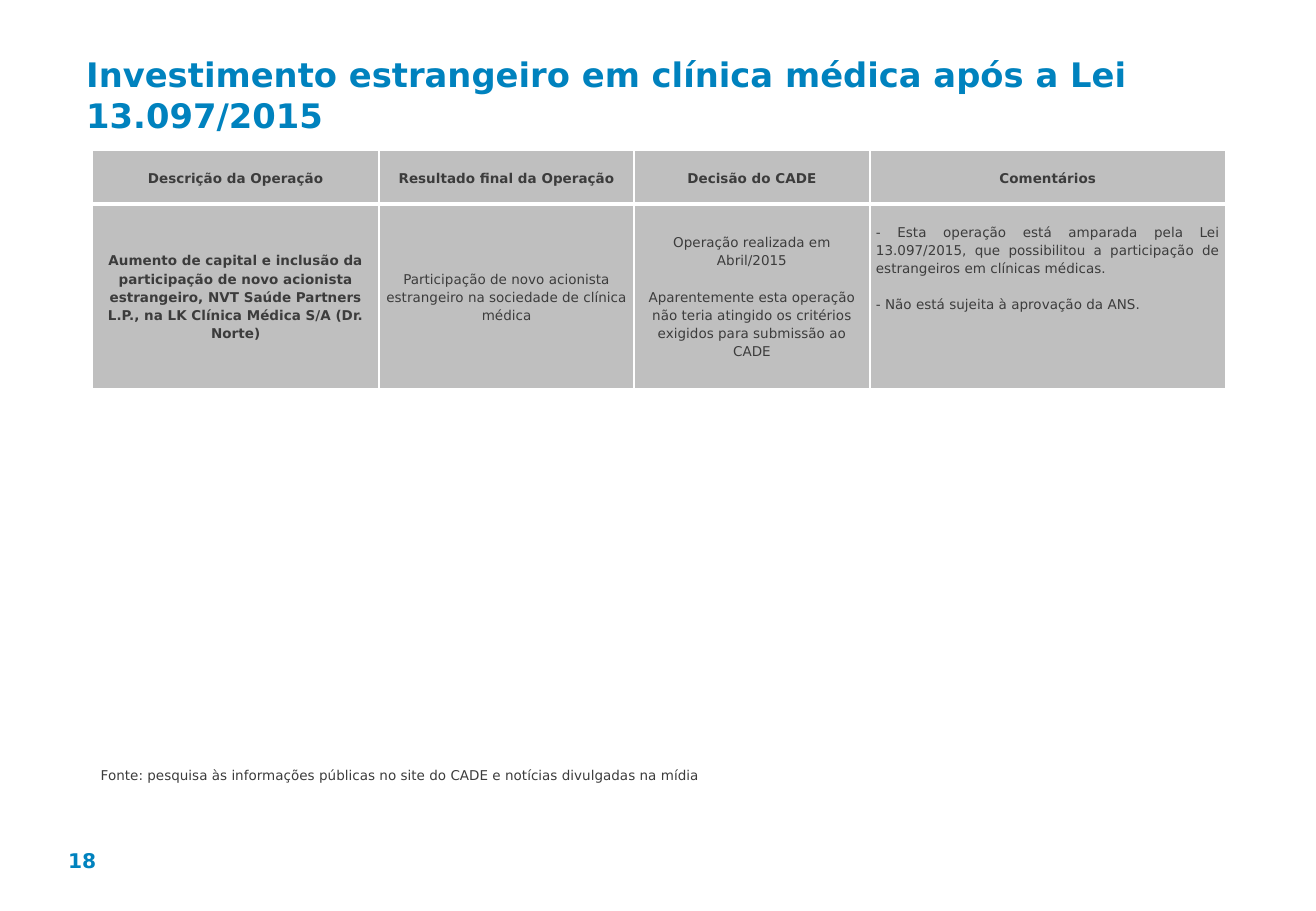
from dataclasses import dataclass

from lxml.etree import SubElement
from pptx import Presentation
from pptx.dml.color import RGBColor
from pptx.enum.text import MSO_ANCHOR as Anchor, MSO_AUTO_SIZE as AutoSize, PP_ALIGN as Align
from pptx.oxml.ns import qn
from pptx.util import Pt

FONT = "DejaVu Sans"
COLOURS = {"blue": "0082BE", "text": "3C3C3C", "cell": "BFBFBF", "border": "FFFFFF"}
LINE_GAP = 10.7  # height of one line of table text
TABLE_TOP, TABLE_LEFT = 89.3, 54.7
COLUMN_WIDTHS = [170, 151.2, 139.7, 211]
ROW_HEIGHTS = [31.7, 109.4]


@dataclass
class TextStyle:
    size: float = 8
    colour: str = "text"
    bold: bool = False
    align: Align = Align.LEFT
    spacing: float = 1.0
    gap: float = 0


@dataclass
class CellText:
    paragraphs: list[str]
    bold: bool = False
    align: Align = Align.CENTER
    anchor: Anchor = Anchor.MIDDLE
    side: float = 2.9
    top: float = 0


@dataclass
class TextArea:
    text: str
    left: float
    top: float
    width: float
    height: float
    style: TextStyle
    anchor: Anchor = Anchor.TOP
    wrap: bool = True


TITLE = TextArea("Investimento estrangeiro em clínica médica após a Lei 13.097/2015",
                 43.9, 28.4, 691.9, 75, TextStyle(20, "blue", True))
LABELS = [
    TextArea("18", 11.5, 495.4, 52.6, 28.8,
             TextStyle(12, "blue", True, Align.RIGHT), Anchor.MIDDLE),
    TextArea("Fonte: pesquisa às informações públicas no site do CADE e notícias "
             "divulgadas na mídia", 52.6, 451.4, 373.7, 17.3, TextStyle(), wrap=False),
]
ROWS = [
    [
        CellText(["Descrição da Operação"], bold=True),
        CellText(["Resultado final da Operação"], bold=True),
        CellText(["Decisão do CADE"], bold=True),
        CellText(["Comentários"], bold=True, anchor=Anchor.TOP, side=0, top=LINE_GAP),
    ],
    [
        CellText(["Aumento de capital e inclusão da participação de novo acionista "
                  "estrangeiro, NVT Saúde Partners L.P., na LK Clínica Médica S/A "
                  "(Dr. Norte)"], bold=True),
        CellText(["Participação de novo acionista estrangeiro na sociedade de clínica médica"]),
        CellText(["Operação realizada em Abril/2015",
                  "Aparentemente esta operação não teria atingido os critérios exigidos "
                  "para submissão ao CADE"]),
        CellText(["- Esta operação está amparada pela Lei 13.097/2015, que possibilitou a "
                  "participação de estrangeiros em clínicas médicas.",
                  "- Não está sujeita à aprovação da ANS."],
                 align=Align.JUSTIFY, anchor=Anchor.TOP, side=3.6, top=LINE_GAP),
    ],
]


def set_all(target: object, values: dict) -> None:
    for name, value in values.items():
        setattr(target, name, value)


def write(frame, paragraphs: list[str], style: TextStyle) -> None:
    for index, text in enumerate(paragraphs):
        para = frame.paragraphs[0] if index == 0 else frame.add_paragraph()
        set_all(para, {"alignment": style.align, "line_spacing": style.spacing,
                       "space_before": Pt(style.gap if index else 0)})
        span = para.add_run()
        span.text = text
        set_all(span.font, {"name": FONT, "size": Pt(style.size), "bold": style.bold})
        span.font.color.rgb = RGBColor.from_string(COLOURS[style.colour])


def fill_area(box, area: TextArea) -> None:
    set_all(box, {name: Pt(getattr(area, name)) for name in ("left", "top", "width", "height")})
    set_all(box.text_frame, {"word_wrap": area.wrap, "vertical_anchor": area.anchor,
                             "auto_size": AutoSize.NONE if area.wrap
                             else AutoSize.SHAPE_TO_FIT_TEXT})
    write(box.text_frame, [area.text], area.style)


def add_borders(cell, widths: dict[str, float]) -> None:
    properties = cell._tc.get_or_add_tcPr()
    for index, (side, width) in enumerate(widths.items()):
        line = SubElement(properties, qn(f"a:ln{side}"), w=str(Pt(width)))
        fill = SubElement(line, qn("a:solidFill"))
        SubElement(fill, qn("a:srgbClr"), val=COLOURS["border"])
        properties.insert(index, line)


def add_operations_table(page) -> None:
    frame = page.shapes.add_table(len(ROWS), len(COLUMN_WIDTHS), Pt(TABLE_LEFT), Pt(TABLE_TOP),
                                  Pt(sum(COLUMN_WIDTHS)), Pt(sum(ROW_HEIGHTS)))
    table = frame.table
    for column, width in zip(table.columns, COLUMN_WIDTHS):
        column.width = Pt(width)
    for row, height in zip(table.rows, ROW_HEIGHTS):
        row.height = Pt(height)
    for row_index, row_texts in enumerate(ROWS):
        for column_index, content in enumerate(row_texts):
            cell = table.cell(row_index, column_index)
            set_all(cell, {"vertical_anchor": content.anchor, "margin_left": Pt(content.side),
                           "margin_right": Pt(content.side), "margin_top": Pt(content.top),
                           "margin_bottom": Pt(0)})
            cell.fill.solid()
            cell.fill.fore_color.rgb = RGBColor.from_string(COLOURS["cell"])
            # The rule under the header is thicker than the others
            is_header = row_index == 0
            add_borders(cell, {"L": 1, "R": 1, "T": 1 if is_header else 3,
                               "B": 3 if is_header else 1})
            write(cell.text_frame, content.paragraphs,
                  TextStyle(bold=content.bold, align=content.align, spacing=1.15, gap=LINE_GAP))


def main() -> None:
    deck = Presentation()
    set_all(deck, {"slide_width": Pt(780), "slide_height": Pt(540)})
    page = deck.slides.add_slide(deck.slide_layouts[5])

    # Title
    fill_area(page.shapes.title, TITLE)

    # Table of operations
    add_operations_table(page)

    # Page number and source note
    for area in LABELS:
        box = page.shapes.add_textbox(Pt(0), Pt(0), Pt(1), Pt(1))
        fill_area(box, area)

    deck.save("out.pptx")


if __name__ == "__main__":
    main()
